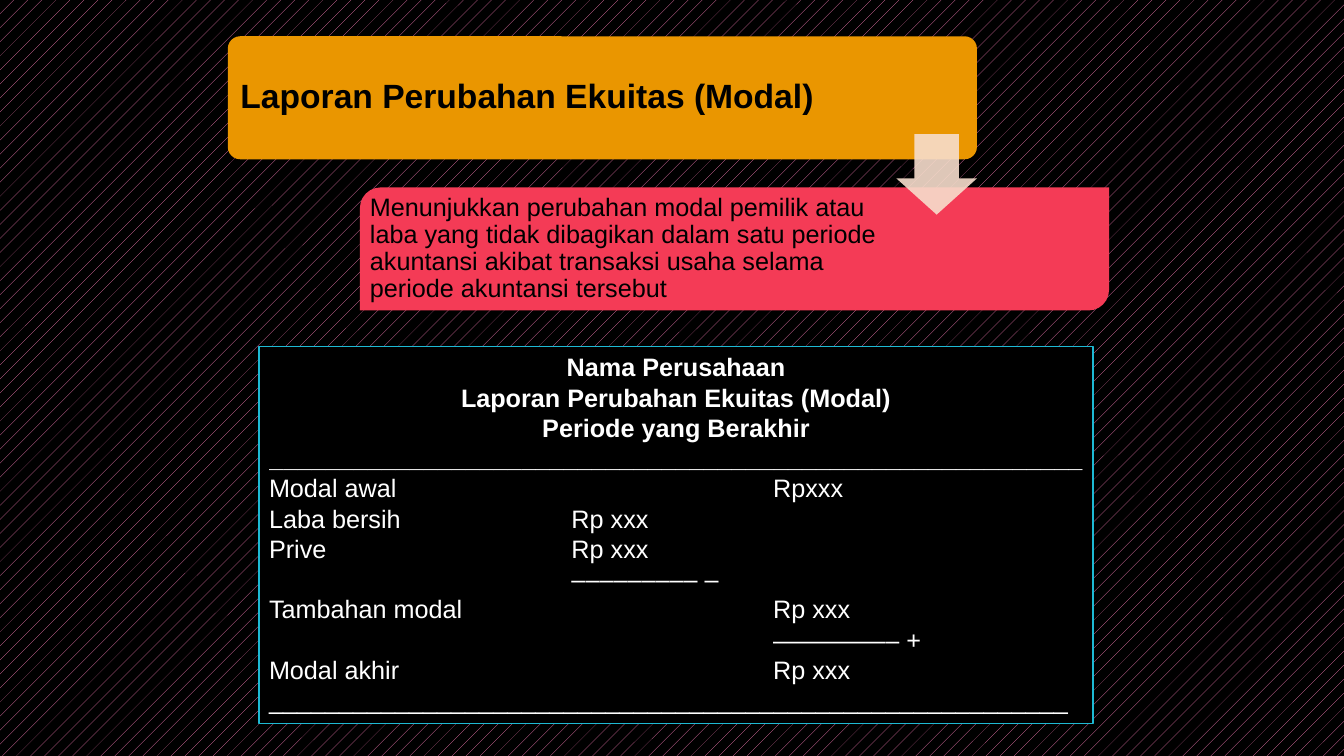
import pptx
import pptx.util
import pptx.dml.color
import pptx.enum.dml
import pptx.enum.shapes
import pptx.enum.text
import pptx.oxml.ns
import lxml.etree

EMU_PER_PX = 9144  # 100 px to the inch
SHAPES = pptx.enum.shapes.MSO_SHAPE
ANCHOR = pptx.enum.text.MSO_ANCHOR
ALIGN = pptx.enum.text.PP_ALIGN

STATEMENT_HEADING = [
    "Nama Perusahaan",
    "Laporan Perubahan Ekuitas (Modal)",
    "Periode yang Berakhir",
    "_" * 58,
]
# Label, inner amount, outer amount
STATEMENT_ROWS = [
    ("Modal awal", "", "Rpxxx"),
    ("Laba bersih", "Rp xxx"),
    ("Prive", "Rp\u00a0xxx"),
    ("", "––––––––– –"),
    ("Tambahan modal", "", "Rp xxx"),
    ("", "", "––––––––– +"),
    ("Modal akhir", "", "Rp xxx"),
    ("_" * 57,),
]
AMOUNT_TABS = (300, 500)


def px(length):
    return pptx.util.Emu(length * EMU_PER_PX)


def rgb(hex_colour):
    return pptx.dml.color.RGBColor.from_string(hex_colour)


def sub(parent, tag, **attributes):
    return lxml.etree.SubElement(parent, pptx.oxml.ns.qn(tag), attributes)


def add_panel(slide, kind, box, fill, margins=(10, 5, 10, 5), anchor=ANCHOR.MIDDLE):
    panel = slide.shapes.add_shape(kind, *map(px, box))
    panel.shadow.inherit = False
    panel.fill.solid()
    panel.fill.fore_color.rgb = rgb(fill)
    panel.line.fill.background()
    frame = panel.text_frame
    frame.word_wrap = True
    frame.vertical_anchor = anchor
    (frame.margin_left, frame.margin_top,
     frame.margin_right, frame.margin_bottom) = map(px, margins)
    return panel


def add_line(frame, text, size, colour, bold=False, align=ALIGN.LEFT):
    first = frame.paragraphs[0]
    paragraph = frame.add_paragraph() if first.runs else first
    paragraph.alignment = align
    run = paragraph.add_run()
    run.text = text
    run.font.name = "Arial"
    run.font.size = pptx.util.Pt(size)
    run.font.bold = bold
    run.font.color.rgb = rgb(colour)
    return paragraph


def add_background(slide):
    fill = slide.background.fill
    fill.patterned()
    fill.pattern = pptx.enum.dml.MSO_PATTERN.PERCENT_5
    fill.fore_color.rgb = rgb("FF80BD")
    fill.back_color.rgb = rgb("000000")


def add_definition(slide, left, top):
    """Title step, an explanation one step down, and the arrow between them."""
    width, height, arrow_size = 743, 122, 80
    step_x, step_y = 131, 150

    # Title
    title = add_panel(slide, SHAPES.ROUNDED_RECTANGLE, (left, top, width, height),
                      "EA9600", (9, 0, 130, 0))
    title.adjustments[0] = 0.1
    heading = add_line(title.text_frame, "Laporan Perubahan Ekuitas (Modal)",
                       24, "000000", bold=True)
    heading.line_spacing = 0.9

    # Explanation
    explanation = add_panel(slide, SHAPES.ROUND_2_DIAG_RECTANGLE,
                            (left + step_x, top + step_y, width, height),
                            "F43B56", (4, 0, 216, 0))
    meaning = add_line(
        explanation.text_frame,
        "Menunjukkan perubahan modal pemilik atau laba yang tidak dibagikan dalam "
        "satu periode akuntansi akibat transaksi usaha selama periode akuntansi tersebut",
        18, "000000")
    meaning.line_spacing = 0.9

    # Arrow, slightly transparent
    arrow = add_panel(slide, SHAPES.DOWN_ARROW,
                      (left + width - arrow_size, top + 97, arrow_size, arrow_size),
                      "F7DDCC")
    arrow.adjustments[0] = 0.55
    arrow.adjustments[1] = 0.45
    colour = arrow.fill._xPr.find(".//" + pptx.oxml.ns.qn("a:srgbClr"))
    sub(colour, "a:alpha", val="90000")


def add_statement(slide, box):
    statement = add_panel(slide, SHAPES.RECTANGLE, box, "000000", anchor=ANCHOR.TOP)
    statement.line.color.rgb = rgb("1EB9D3")
    statement.line.width = pptx.util.Pt(1)
    frame = statement.text_frame
    frame.auto_size = pptx.enum.text.MSO_AUTO_SIZE.SHAPE_TO_FIT_TEXT

    for text in STATEMENT_HEADING:
        add_line(frame, text, 18, "FFFFFF", bold=True, align=ALIGN.CENTER)

    # Amounts line up on two tab stops
    for cells in STATEMENT_ROWS:
        row = add_line(frame, "\t".join(cells), 18, "FFFFFF")
        tabs = sub(row._p.get_or_add_pPr(), "a:tabLst")
        for stop in AMOUNT_TABS:
            sub(tabs, "a:tab", pos=str(px(stop)), algn="l")


def main():
    presentation = pptx.Presentation()
    presentation.slide_width = px(1333)
    presentation.slide_height = px(750)
    slide = presentation.slides.add_slide(presentation.slide_layouts[6])
    add_background(slide)
    add_definition(slide, 226, 36)
    add_statement(slide, (257, 344, 827, 374))
    presentation.save("out.pptx")


if __name__ == "__main__":
    main()
